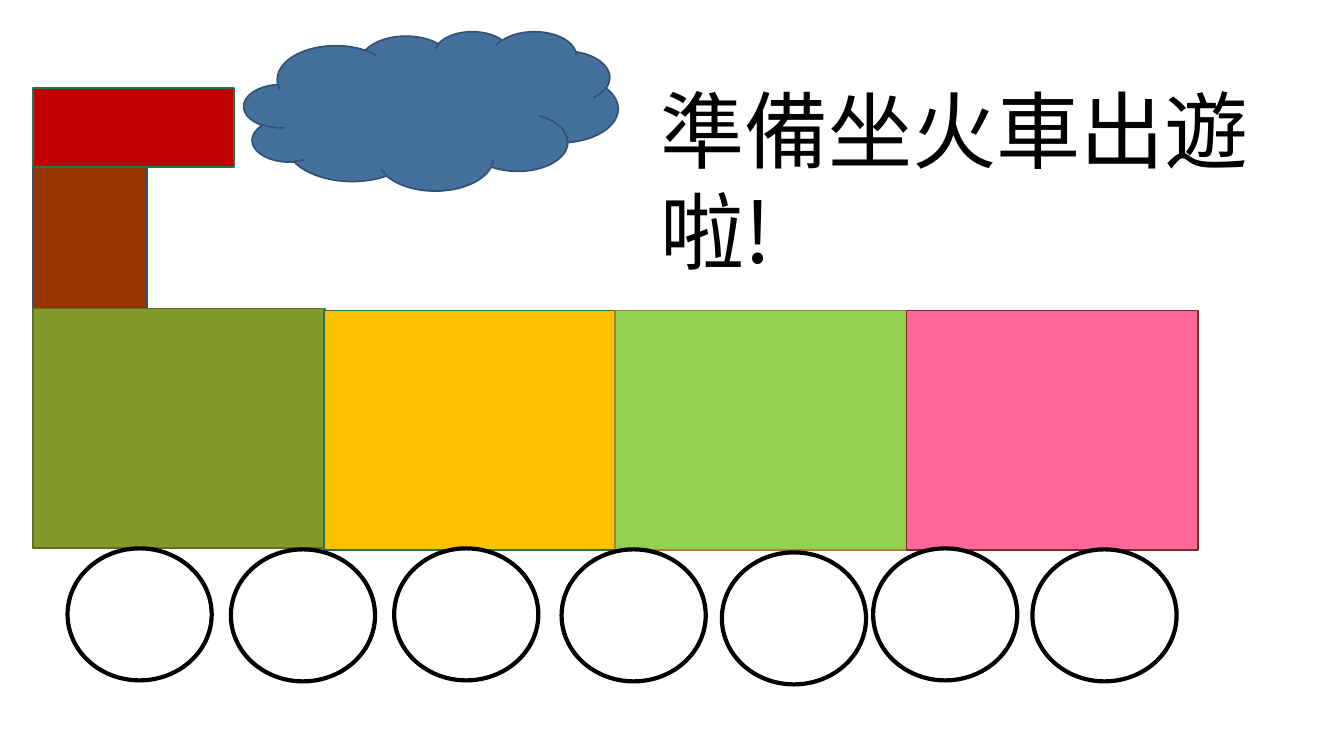
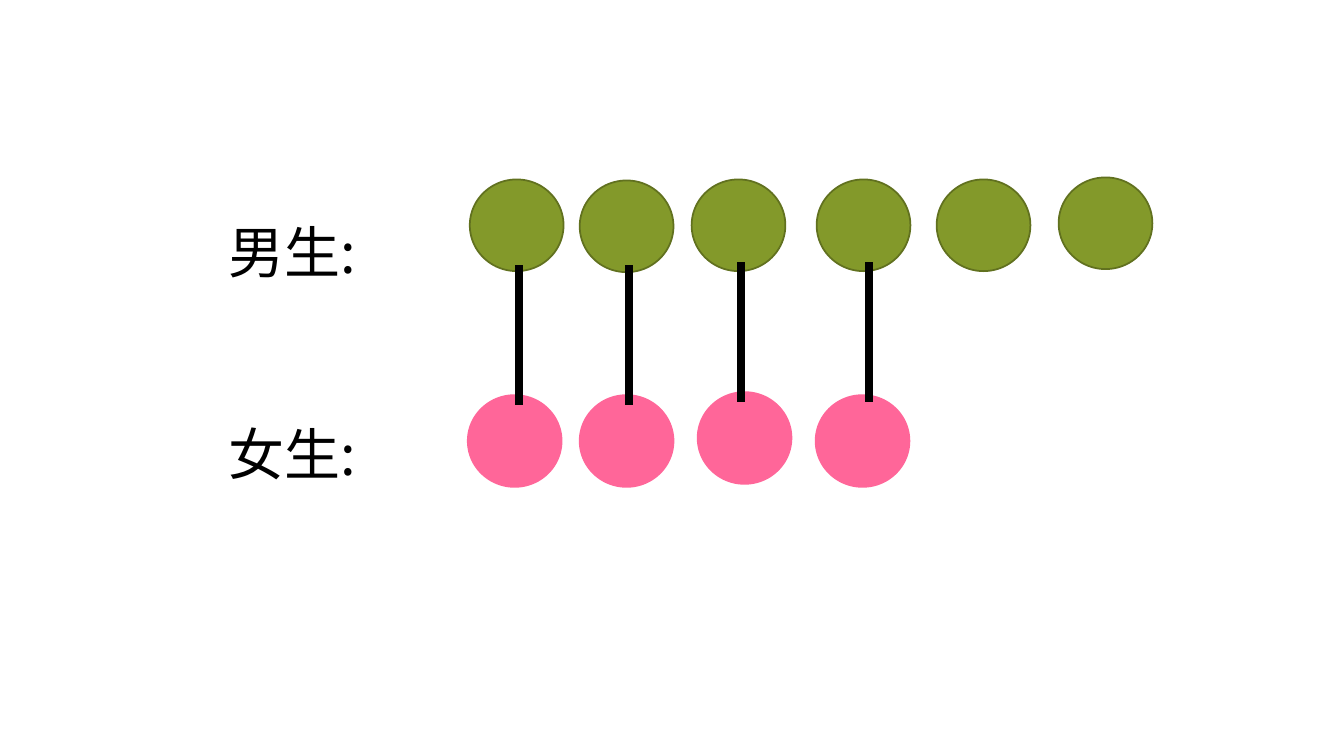
import pptx
import pptx.dml.color
import pptx.enum.shapes
import pptx.enum.text
import pptx.oxml
import pptx.oxml.ns
import pptx.util
from pptx.util import Inches

FONT = "Noto Sans CJK SC"
BLACK, WHITE = "000000", "FFFFFF"
OLIVE, OLIVE_EDGE, PINK = "83992A", "61711F", "FF6699"
BLUE_EDGE, TEAL_EDGE = "325374", "2C7053"
THIN, WHEEL_LINE, LINK_LINE = 1.25, 3, 6
LINE_PITCH = 72  # points

TITLE = "準備坐火車出遊啦!"
ENGINE = [  # shape, left, top, width, height, fill, edge
    ("RECTANGLE", 0.33, 1.66, 1.13, 1.41, "993300", BLUE_EDGE),
    ("RECTANGLE", 0.33, 0.87, 1.99, 0.79, "C00000", TEAL_EDGE),
    ("CLOUD", 2.42, 0.31, 3.71, 1.58, "44709D", BLUE_EDGE),
]
CARS = [  # top, fill, edge
    (3.06, OLIVE, OLIVE_EDGE),
    (3.08, "FFC000", TEAL_EDGE),
    (3.08, "92D050", "A4842F"),
    (3.08, PINK, "782C26"),
]
CAR_SIZE = (2.89, 2.38)
FIRST_CAR, LAST_CAR = 0.33, 8.99
CAR_PITCH = (LAST_CAR - FIRST_CAR) / (len(CARS) - 1)
WHEELS = [(0.67, 5.44), (2.29, 5.45), (3.91, 5.44), (5.57, 5.45),
          (7.16, 5.48), (8.66, 5.44), (10.24, 5.45)]
WHEEL_SIZE = (1.43, 1.31)

LABELS = ["男生:", "女生:"]
BOYS = [(4.66, 1.78), (5.75, 1.79), (6.86, 1.78),
        (8.1, 1.78), (9.29, 1.78), (10.5, 1.76)]
GIRLS = [(4.64, 3.92), (5.75, 3.92), (6.92, 3.89), (8.09, 3.92)]
DOT_SIZE = (0.93, 0.91)
LINKS = [(5.15, 2.63), (6.24, 2.63), (7.35, 2.6), (8.62, 2.6)]
LINK_LENGTH = 1.39


def rgb(color):
    return pptx.dml.color.RGBColor.from_string(color)


def add_shape(slide, kind, left, top, width, height, fill, edge, weight=THIN):
    preset = pptx.enum.shapes.MSO_SHAPE[kind]
    shape = slide.shapes.add_shape(
        preset, Inches(left), Inches(top), Inches(width), Inches(height))
    shape.shadow.inherit = False
    shape.fill.solid()
    shape.fill.fore_color.rgb = rgb(fill)
    shape.line.color.rgb = rgb(edge)
    shape.line.width = pptx.util.Pt(weight)


def add_circles(slide, places, size, fill, edge, weight=THIN):
    for left, top in places:
        add_shape(slide, "OVAL", left, top, *size, fill, edge, weight)


def add_link(slide, left, top):
    link = slide.shapes.add_connector(
        pptx.enum.shapes.MSO_CONNECTOR.STRAIGHT,
        Inches(left), Inches(top), Inches(left), Inches(top + LINK_LENGTH))
    link.line.color.rgb = rgb(BLACK)
    link.line.width = pptx.util.Pt(LINK_LINE)
    link._element.spPr.append(pptx.oxml.parse_xml(
        f"<a:effectLst {pptx.oxml.ns.nsdecls('a')}/>"))


def write_text(shape, place, lines, size, gap=0):
    """Place a text shape and fill it with left-aligned lines, gap points apart."""
    shape.left, shape.top, shape.width, shape.height = map(Inches, place)
    frame = shape.text_frame
    frame.word_wrap = True
    frame.auto_size = pptx.enum.text.MSO_AUTO_SIZE.NONE
    frame.vertical_anchor = pptx.enum.text.MSO_ANCHOR.TOP
    frame.text = "\n".join(lines)
    for number, paragraph in enumerate(frame.paragraphs):
        paragraph.alignment = pptx.enum.text.PP_ALIGN.LEFT
        paragraph.line_spacing = pptx.util.Pt(LINE_PITCH)
        paragraph.space_before = pptx.util.Pt(gap if number else 0)
        paragraph.font.size = pptx.util.Pt(size)
        paragraph.font.color.rgb = rgb(BLACK)
        paragraph.font.name = FONT
        properties = paragraph._p.pPr.find(pptx.oxml.ns.qn("a:defRPr"))
        properties.append(pptx.oxml.parse_xml(
            f'<a:ea {pptx.oxml.ns.nsdecls("a")} typeface="{FONT}"/>'))


def build_train(presentation):
    slide = presentation.slides.add_slide(presentation.slide_layouts[5])
    write_text(slide.shapes.title, (6.45, 0.73, 6.56, 2.12), [TITLE], 60)
    for part in ENGINE:
        add_shape(slide, *part)
    for number, (top, fill, edge) in enumerate(CARS):
        left = FIRST_CAR + number * CAR_PITCH
        add_shape(slide, "RECTANGLE", left, top, *CAR_SIZE, fill, edge)
    add_circles(slide, WHEELS, WHEEL_SIZE, WHITE, BLACK, WHEEL_LINE)


def build_comparison(presentation):
    slide = presentation.slides.add_slide(presentation.slide_layouts[6])
    labels = slide.shapes.add_textbox(0, 0, 0, 0)
    write_text(labels, (2.17, 1.78, 8.07, 3.02), LABELS, 40, LINE_PITCH)
    add_circles(slide, BOYS, DOT_SIZE, OLIVE, OLIVE_EDGE)
    add_circles(slide, GIRLS, DOT_SIZE, PINK, PINK)
    for left, top in LINKS:
        add_link(slide, left, top)


def main():
    presentation = pptx.Presentation()
    presentation.slide_width = Inches(13.33)
    presentation.slide_height = Inches(7.5)
    build_train(presentation)
    build_comparison(presentation)
    presentation.save("out.pptx")


if __name__ == "__main__":
    main()
